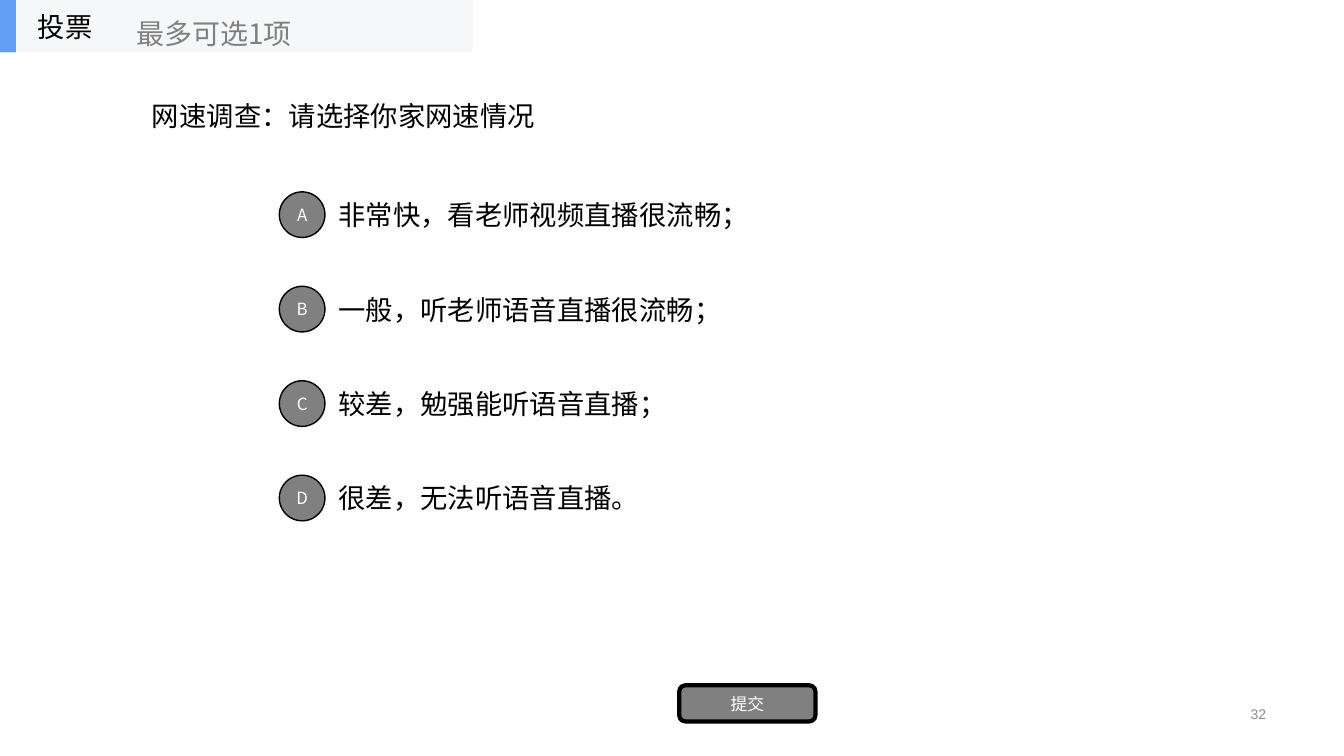
from dataclasses import dataclass

from lxml import etree
from pptx import Presentation
from pptx.dml.color import RGBColor
from pptx.enum.shapes import MSO_SHAPE
from pptx.enum.text import MSO_ANCHOR, PP_ALIGN
from pptx.oxml.ns import qn
from pptx.util import Cm, Pt

RECTANGLE = MSO_SHAPE.RECTANGLE
ROUNDED = MSO_SHAPE.ROUNDED_RECTANGLE
OVAL = MSO_SHAPE.OVAL
MIDDLE = MSO_ANCHOR.MIDDLE
LEFT, CENTER, RIGHT = PP_ALIGN.LEFT, PP_ALIGN.CENTER, PP_ALIGN.RIGHT


@dataclass(frozen=True)
class Theme:
    """Colours, fonts and type sizes of the slide."""
    ink: str = "000000"
    white: str = "FFFFFF"
    grey: str = "808080"
    page_grey: str = "8C8C8C"
    band: str = "F6F7F8"
    accent: str = "639EF4"
    font: str = "Noto Sans CJK SC"
    page_font: str = "Arial"
    body: float = 19.5
    hint: float = 20
    label: float = 12
    page: float = 10


THEME = Theme()
OPTIONS = (
    ("A", "非常快，看老师视频直播很流畅；"),
    ("B", "一般，听老师语音直播很流畅；"),
    ("C", "较差，勉强能听语音直播；"),
    ("D", "很差，无法听语音直播。"),
)
FIRST_OPTION_TOP = 4.52
OPTION_STEP = 2.38
OPTION_HEIGHT = 1.78
BADGE_SIZE = 1.15


def write(shape, text, size, color, align=LEFT, font=THEME.font):
    """Put one formatted, vertically centred line into a shape."""
    frame = shape.text_frame
    frame.text = text
    frame.word_wrap = True
    frame.vertical_anchor = MIDDLE
    para = frame.paragraphs[0]
    para.alignment = align
    span = para.runs[0]
    span.font.size = Pt(size)
    span.font.name = font
    span.font.color.rgb = RGBColor.from_string(color)
    properties = span.font._element
    properties.find(qn("a:latin")).addnext(
        etree.Element(qn("a:ea"), typeface=font))


def add_text(shapes, place, text, size=THEME.body, color=THEME.ink, **style):
    """Add a text box at a place given in centimetres."""
    box = shapes.add_textbox(*map(Cm, place))
    write(box, text, size, color, **style)


def add_block(shapes, kind, place, fill, line_width=0):
    """Add a flat filled shape, outlined when a line width is given."""
    block = shapes.add_shape(kind, *map(Cm, place))
    block.shadow.inherit = False
    block.fill.solid()
    block.fill.fore_color.rgb = RGBColor.from_string(fill)
    if line_width:
        block.line.color.rgb = RGBColor.from_string(THEME.ink)
        block.line.width = Pt(line_width)
    else:
        block.line.fill.background()
    return block


def add_button(shapes, kind, place, text, line_width):
    """Add a grey outlined button with a centred white label."""
    button = add_block(shapes, kind, place, THEME.grey, line_width)
    frame = button.text_frame
    frame.margin_left = frame.margin_right = 0
    frame.margin_top = frame.margin_bottom = 0
    write(button, text, THEME.label, THEME.white, CENTER)


def add_option(shapes, index, letter, text):
    """Add one answer with its round letter badge."""
    top = FIRST_OPTION_TOP + index * OPTION_STEP
    badge_top = top + (OPTION_HEIGHT - BADGE_SIZE) / 2
    add_text(shapes, (8.28, top, 13.46, OPTION_HEIGHT), text)
    add_button(shapes, OVAL, (7.04, badge_top, BADGE_SIZE, BADGE_SIZE),
               letter, 1)


def add_header(shapes):
    """Add the grouped title band with its hint."""
    header = shapes.add_group_shape().shapes
    add_block(header, RECTANGLE, (0, 0, 11.91, 1.32), THEME.band)
    add_block(header, RECTANGLE, (0, 0, 0.4, 1.32), THEME.accent)
    add_text(header, (0.7, 0, 3.96, 1.32), "投票")
    add_text(header, (3.18, 0.3, 5.2, 1.07), "最多可选1项",
             THEME.hint, THEME.grey)


def main():
    """Build the poll slide and save it."""
    deck = Presentation()
    deck.slide_width, deck.slide_height = Cm(33.87), Cm(19.05)
    page = deck.slides.add_slide(deck.slide_layouts[6])
    shapes = page.shapes
    add_text(shapes, (3.58, 1.32, 24.31, 3.2), "网速调查：请选择你家网速情况")
    for index, (letter, text) in enumerate(OPTIONS):
        add_option(shapes, index, letter, text)
    add_button(shapes, ROUNDED, (17.12, 17.27, 3.43, 0.91), "提交", 3)
    add_text(shapes, (24.66, 17.55, 7.5, 0.89), "32", THEME.page,
             THEME.page_grey, align=RIGHT, font=THEME.page_font)
    add_header(shapes)
    deck.save("out.pptx")


if __name__ == "__main__":
    main()
